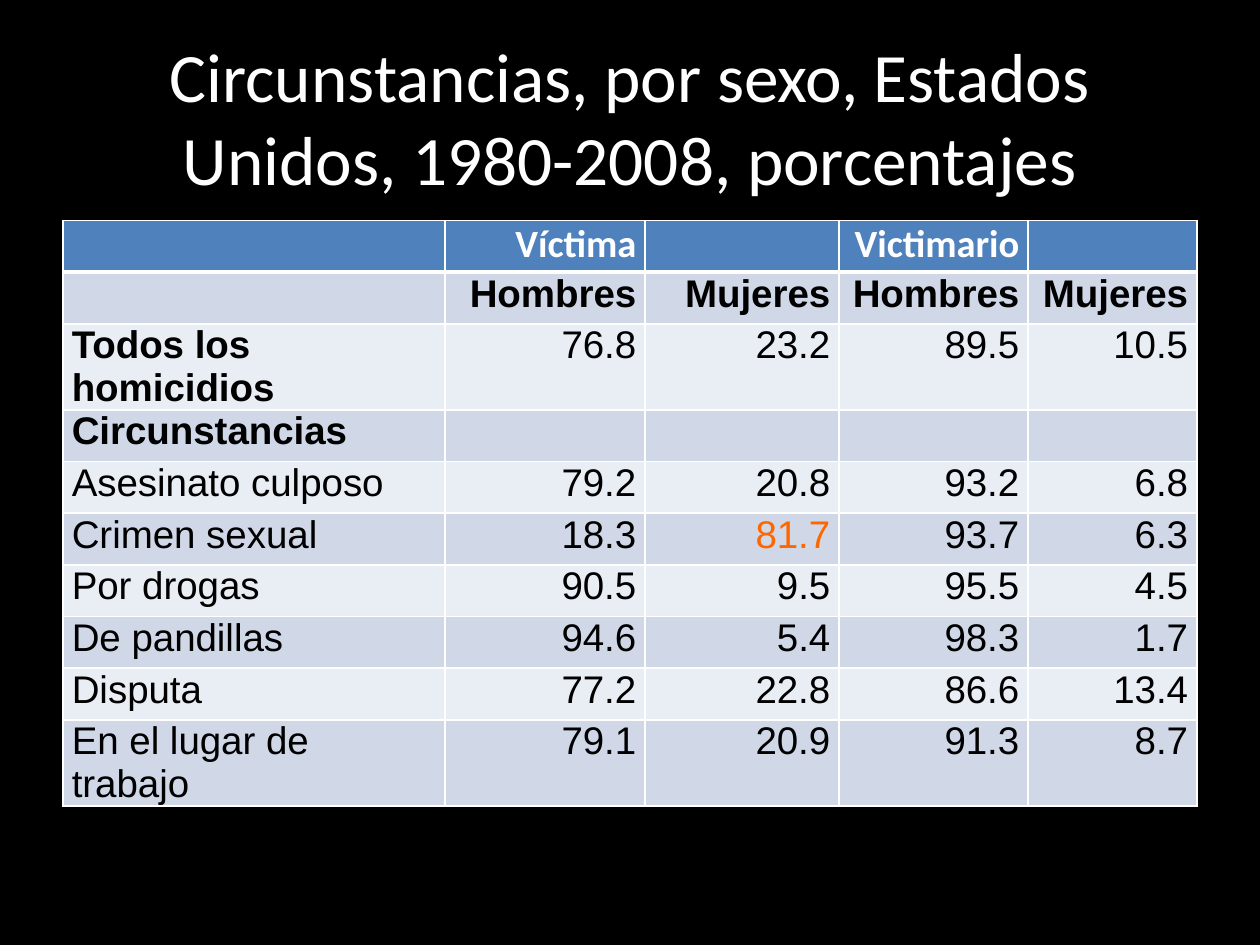
from pptx import Presentation
from pptx.dml.color import RGBColor
from pptx.enum.text import MSO_ANCHOR, PP_ALIGN
from pptx.oxml import parse_xml
from pptx.oxml.ns import nsdecls
from pptx.util import Inches, Pt

BLACK = RGBColor(0x00, 0x00, 0x00)
WHITE = RGBColor(0xFF, 0xFF, 0xFF)
BLUE = RGBColor(0x4F, 0x81, 0xBD)
DARK_BAND = RGBColor(0xD0, 0xD8, 0xE8)
LIGHT_BAND = RGBColor(0xE9, 0xED, 0xF4)
ORANGE = RGBColor(0xFF, 0x66, 0x00)

COLUMN_WIDTHS = [3.03, 1.59, 1.54, 1.5, 1.34]
ROW_HEIGHT = 0.41
ROWS = [
    ["", "Víctima", "", "Victimario", ""],
    ["", "Hombres", "Mujeres", "Hombres", "Mujeres"],
    ["Todos los homicidios", "76.8", "23.2", "89.5", "10.5"],
    ["Circunstancias", "", "", "", ""],
    ["Asesinato culposo", "79.2", "20.8", "93.2", "6.8"],
    ["Crimen sexual", "18.3", "81.7", "93.7", "6.3"],
    ["Por drogas", "90.5", "9.5", "95.5", "4.5"],
    ["De pandillas", "94.6", "5.4", "98.3", "1.7"],
    ["Disputa", "77.2", "22.8", "86.6", "13.4"],
    ["En el lugar de trabajo", "79.1", "20.9", "91.3", "8.7"],
]
BOLD_LABELS = {"Todos los homicidios", "Circunstancias"}
HIGHLIGHT = "81.7"


class SlideBuilder:
    def __init__(self, page):
        self.page = page
        self.heading_font = "Calibri"
        self.body_font = "Arial"
        self.text_size = Pt(22)
        page.background.fill.solid()
        page.background.fill.fore_color.rgb = BLACK

    def format_font(self, para, name, size, color, bold=False):
        font = para.font
        font.name, font.size, font.bold = name, size, bold
        font.color.rgb = color

    def add_title(self, text, left, top, width, height):
        title = self.page.shapes.title
        title.left, title.top = Inches(left), Inches(top)
        title.width, title.height = Inches(width), Inches(height)
        frame = title.text_frame
        frame.text = text
        frame.word_wrap = True
        frame.vertical_anchor = MSO_ANCHOR.MIDDLE
        para = frame.paragraphs[0]
        para.alignment = PP_ALIGN.CENTER
        self.format_font(para, self.heading_font, Pt(39.6), WHITE)

    def add_table(self, rows, left, top):
        table = self.page.shapes.add_table(
            len(rows), len(COLUMN_WIDTHS), Inches(left), Inches(top),
            Inches(sum(COLUMN_WIDTHS)), Inches(ROW_HEIGHT * len(rows))).table
        for column, width in zip(table.columns, COLUMN_WIDTHS):
            column.width = Inches(width)
        for row_index, values in enumerate(rows):
            table.rows[row_index].height = Inches(ROW_HEIGHT)
            for column_index, text in enumerate(values):
                cell = table.cell(row_index, column_index)
                self.format_cell(cell, text, row_index, column_index)

    def format_cell(self, cell, text, row_index, column_index):
        is_header = row_index == 0
        cell.text = text
        cell.margin_left = cell.margin_right = Inches(0.07)
        cell.margin_top = cell.margin_bottom = 0
        band = DARK_BAND if row_index % 2 else LIGHT_BAND
        cell.fill.solid()
        cell.fill.fore_color.rgb = BLUE if is_header else band
        para = cell.text_frame.paragraphs[0]
        para.alignment = PP_ALIGN.RIGHT if column_index else PP_ALIGN.LEFT
        color = WHITE if is_header else ORANGE if text == HIGHLIGHT else BLACK
        self.format_font(
            para, self.heading_font if is_header else self.body_font,
            self.text_size, color, row_index < 2 or text in BOLD_LABELS)
        self.set_borders(cell, top=3 if row_index == 1 else 1,
                         bottom=3 if is_header else 1)

    def set_borders(self, cell, top, bottom):
        """Draw white cell edges; top and bottom widths are in points."""
        properties = cell._tc.get_or_add_tcPr()
        widths = {"lnL": 1, "lnR": 1, "lnT": top, "lnB": bottom}
        for position, (tag, width) in enumerate(widths.items()):
            properties.insert(position, parse_xml(
                f'<a:{tag} {nsdecls("a")} w="{Pt(width)}"><a:solidFill>'
                f'<a:srgbClr val="{WHITE}"/></a:solidFill></a:{tag}>'))


def main():
    deck = Presentation()
    deck.slide_width, deck.slide_height = Inches(10), Inches(7.5)
    title_only = deck.slide_layouts[5]
    builder = SlideBuilder(deck.slides.add_slide(title_only))
    builder.add_title(
        "Circunstancias, por sexo, Estados Unidos, 1980-2008, porcentajes",
        0.5, 0.3, 9, 1.25)
    builder.add_table(ROWS, 0.5, 1.75)
    deck.save("out.pptx")


if __name__ == "__main__":
    main()
